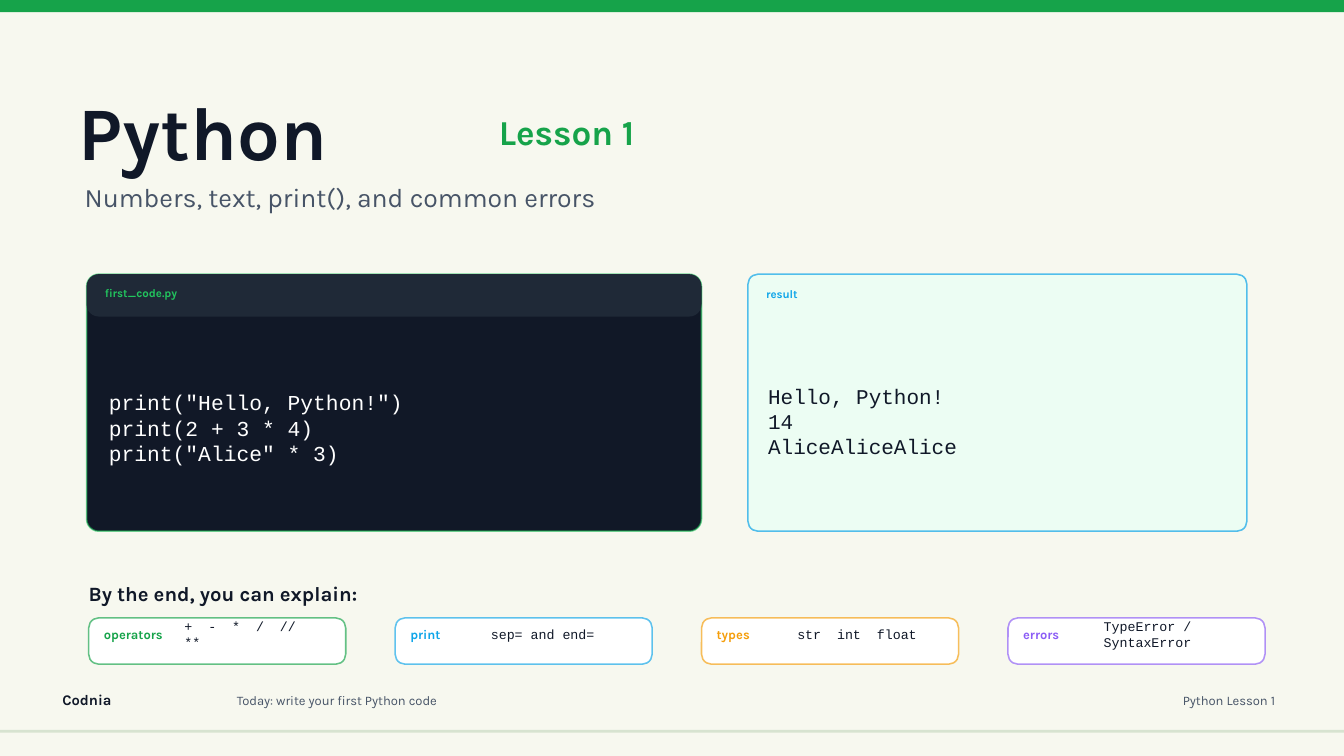
import lxml.etree
import pptx
import pptx.dml.color
import pptx.enum.shapes
import pptx.enum.text
import pptx.oxml.ns
import pptx.util

Pt = pptx.util.Pt
Shape = pptx.enum.shapes.MSO_SHAPE
Align = pptx.enum.text.PP_ALIGN

# Content
TITLE = "Python"
LESSON = "Lesson 1"
SUBTITLE = "Numbers, text, print(), and common errors"
CODE_NAME = "first_code.py"
CODE = ['print("Hello, Python!")', "print(2 + 3 * 4)", 'print("Alice" * 3)']
RESULT_NAME = "result"
RESULT = ["Hello, Python!", "14", "AliceAliceAlice"]
GOALS_HEADING = "By the end, you can explain:"
GOALS = [
    ("operators", "+  -  *  /  //  **", "16A34A"),
    ("print", "sep= and end=", "0EA5E9"),
    ("types", "str  int  float", "F59E0B"),
    ("errors", "TypeError / SyntaxError", "8B5CF6"),
]
BRAND = "Codnia"
FOOTER_NOTE = "Today: write your first Python code"
FOOTER_LESSON = "Python Lesson 1"

# Style
WIDTH, HEIGHT = 960, 540
SANS, MONO = "Karla", "Courier New"
INK, GRAY, GREEN, BLUE, LIME = "101828", "475467", "16A34A", "0EA5E9", "22C55E"
PANEL_TOP, PANEL_HEIGHT, PANEL_RADIUS = 195.84, 183.6, 8.64
CARD_LEFT, CARD_TOP, CARD_WIDTH, CARD_HEIGHT = 63.36, 441.36, 183.6, 33.12
CARD_PITCH, CARD_RADIUS = 218.88, 7.2


def color(value):
    return pptx.dml.color.RGBColor.from_string(value)


def write(box, text, size=10, tint=INK, font=SANS, bold=False, align=Align.LEFT):
    """Fill a text shape with one line, or with a list of lines."""
    frame = box.text_frame
    frame.word_wrap = True
    frame.auto_size = pptx.enum.text.MSO_AUTO_SIZE.NONE
    frame.vertical_anchor = pptx.enum.text.MSO_ANCHOR.MIDDLE
    frame.margin_left = frame.margin_right = frame.margin_top = frame.margin_bottom = 0
    lines = [text] if isinstance(text, str) else text
    for index, line in enumerate(lines):
        para = frame.paragraphs[0] if index == 0 else frame.add_paragraph()
        para.alignment = align
        para.space_before = Pt(0)
        span = para.add_run()
        span.text = line
        span.font.name = font
        span.font.size = Pt(size)
        span.font.bold = bold
        span.font.color.rgb = color(tint)


def add_text(page, text, left, top, width, height, **style):
    box = page.shapes.add_textbox(Pt(left), Pt(top), Pt(width), Pt(height))
    write(box, text, **style)


def fill_placeholder(box, text, left, top, width, height, **style):
    box.left, box.top, box.width, box.height = Pt(left), Pt(top), Pt(width), Pt(height)
    write(box, text, **style)


def add_block(page, left, top, width, height, fill, radius=0, line=None, opacity=100):
    kind = Shape.ROUNDED_RECTANGLE if radius else Shape.RECTANGLE
    block = page.shapes.add_shape(kind, Pt(left), Pt(top), Pt(width), Pt(height))
    block.shadow.inherit = False
    block.fill.solid()
    block.fill.fore_color.rgb = color(fill)
    if radius:
        block.adjustments[0] = radius / min(width, height)
    if line:
        block.line.color.rgb = color(line)
        block.line.width = Pt(1.1)
        qn = pptx.oxml.ns.qn
        tint = block.element.spPr.find(qn("a:ln")).find(".//" + qn("a:srgbClr"))
        lxml.etree.SubElement(tint, qn("a:alpha")).set("val", str(opacity * 1000))
    else:
        block.line.fill.background()


def add_frame(page):
    """Top bar, bottom rule and footer texts."""
    add_block(page, 0, 0, WIDTH, 8.64, GREEN)
    add_block(page, 0, 521.28, WIDTH, 2.16, "D7E3D0")
    add_text(page, BRAND, 44.64, 491.76, 86.4, 15.84, size=10.5, bold=True)
    add_text(page, FOOTER_NOTE, 169.2, 492.48, 468, 15.84, size=9.3, tint=GRAY)
    add_text(page, FOOTER_LESSON, 777.6, 492.48, 133.2, 15.84,
             size=9.3, tint=GRAY, align=Align.RIGHT)


def add_headings(page):
    title, subtitle = page.placeholders
    fill_placeholder(title, TITLE, 56.16, 66.24, 295.2, 53.28, size=54, bold=True)
    fill_placeholder(subtitle, SUBTITLE, 60.48, 128.16, 590.4, 25.2, size=19, tint=GRAY)
    add_text(page, LESSON, 356.4, 77.76, 187.2, 32.4, size=25, tint=GREEN, bold=True)


def add_panels(page):
    # Code editor
    left, width = 61.92, 439.2
    add_block(page, left, PANEL_TOP, width, PANEL_HEIGHT, "111827",
              radius=PANEL_RADIUS, line=LIME, opacity=60)
    add_block(page, left, PANEL_TOP, width, 30.24, "1F2937", radius=PANEL_RADIUS)
    add_text(page, CODE_NAME, left + 12.96, 204.48, width - 25.92, 10.08,
             size=8.2, tint=LIME, bold=True)
    add_text(page, CODE, left + 15.84, 239.04, width - 31.68, 133.2,
             size=15.2, tint="FFFFFF", font=MONO)

    # Program output
    left, width = 534.24, 356.4
    add_block(page, left, PANEL_TOP, width, PANEL_HEIGHT, "ECFDF3",
              radius=7.2, line=BLUE, opacity=70)
    add_text(page, RESULT_NAME, left + 12.96, 205.2, width - 25.92, 10.08,
             size=8.2, tint=BLUE, bold=True)
    add_text(page, RESULT, left + 14.4, 228.96, width - 28.8, 144, size=15, font=MONO)


def add_goals(page):
    add_text(page, GOALS_HEADING, CARD_LEFT, 414, 237.6, 20.16, size=14.5, bold=True)
    for index, (label, detail, tint) in enumerate(GOALS):
        left = CARD_LEFT + index * CARD_PITCH
        add_block(page, left, CARD_TOP, CARD_WIDTH, CARD_HEIGHT, "FFFFFF",
                  radius=CARD_RADIUS, line=tint, opacity=65)
        add_text(page, label, left + 10.8, CARD_TOP + 6.48, 56.16, 10.8,
                 size=9.2, tint=tint, bold=True)
        add_text(page, detail, left + 68.4, CARD_TOP + 5.04, 100.8, 12.96,
                 size=9.5, font=MONO)


def main():
    deck = pptx.Presentation()
    deck.slide_width, deck.slide_height = Pt(WIDTH), Pt(HEIGHT)
    page = deck.slides.add_slide(deck.slide_layouts[0])
    page.background.fill.solid()
    page.background.fill.fore_color.rgb = color("F7F8EF")
    add_frame(page)
    add_headings(page)
    add_panels(page)
    add_goals(page)
    deck.save("out.pptx")


if __name__ == "__main__":
    main()
